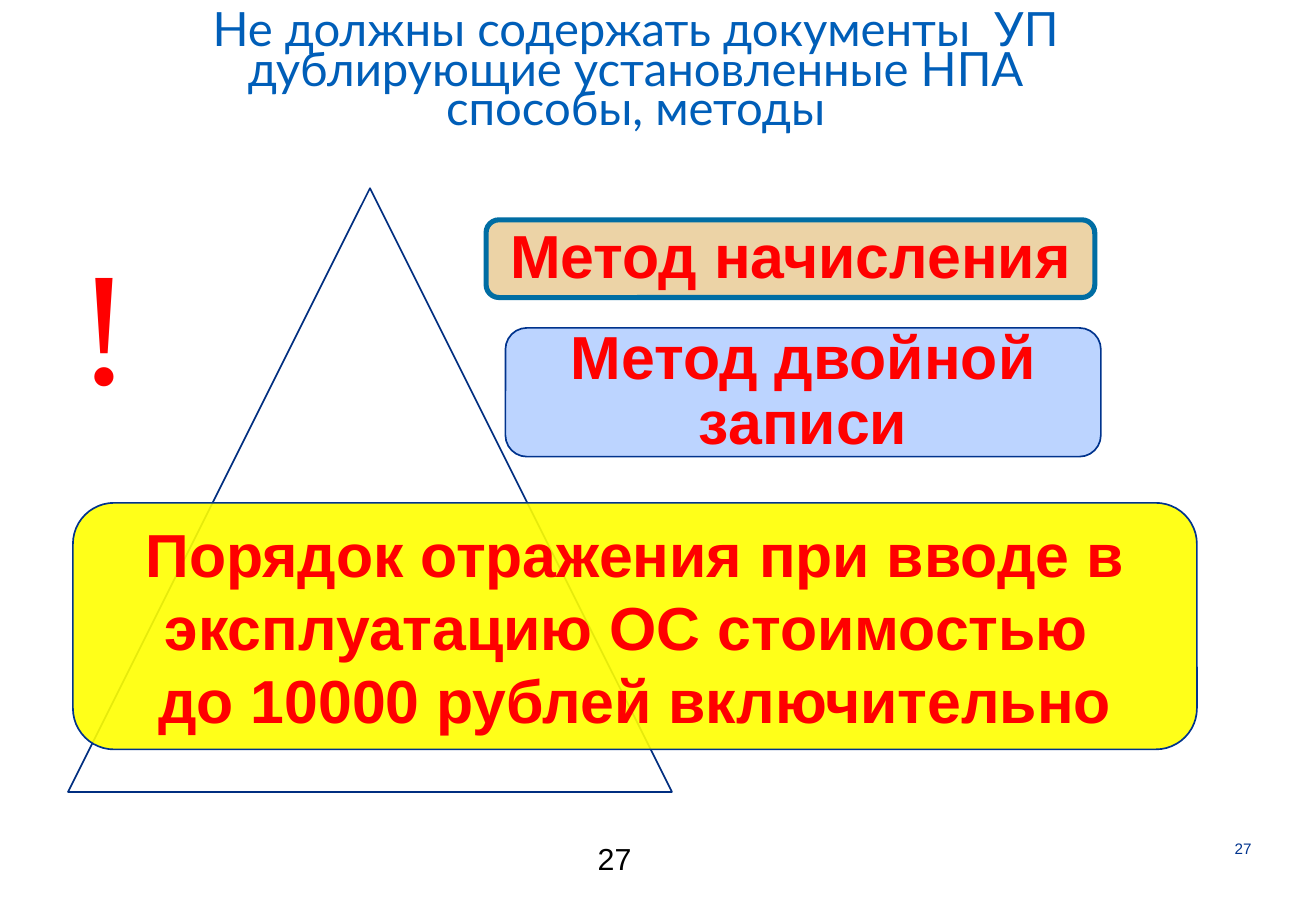
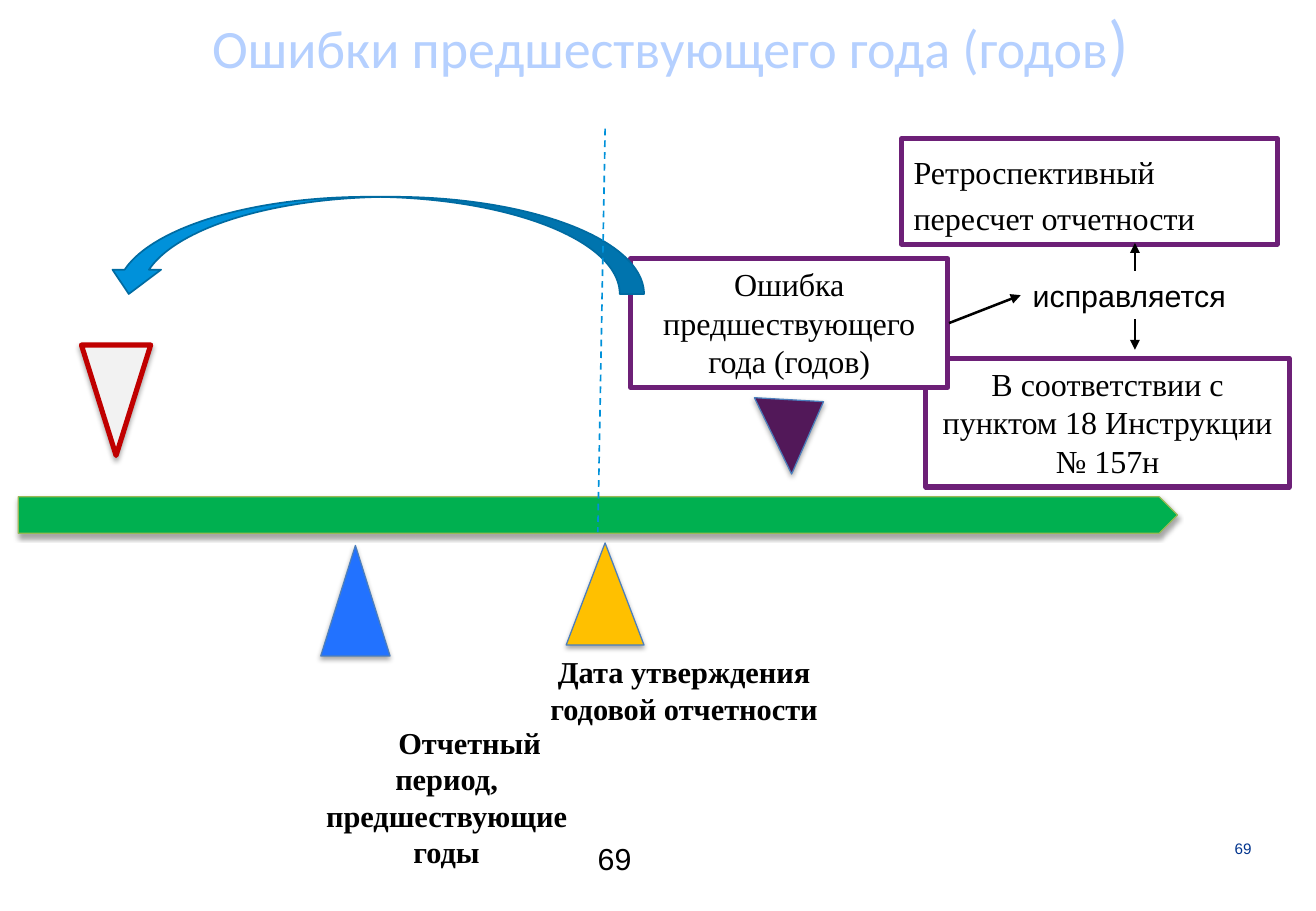
"""Build two slides on accounting policy and prior-year errors."""
from dataclasses import dataclass
from typing import Optional

from lxml.etree import SubElement
from pptx import Presentation
from pptx.dml.color import RGBColor as Rgb
from pptx.enum.dml import MSO_LINE_DASH_STYLE as Dash
from pptx.enum.shapes import MSO_CONNECTOR as Link
from pptx.enum.shapes import MSO_SHAPE as Form
from pptx.enum.text import MSO_ANCHOR as Anchor
from pptx.enum.text import PP_ALIGN as Align
from pptx.oxml.ns import qn
from pptx.util import Inches, Length, Pt

HUES = {
    "white": "FFFFFF", "black": "000000", "red": "FF0000", "crimson": "C00000",
    "navy": "00338D", "deep": "002E80", "title": "005EB8", "pale": "B5D0FF",
    "sand": "EBCF9D", "teal": "006DA3", "yellow": "FFFF00", "green": "00B050",
    "olive": "98B955", "gold": "FFC000", "blue": "2272FF", "steel": "4B7EBC",
    "plum": "521859", "purple": "6D2077", "grey": "F2F2F2", "sky": "0091DA",
    "ocean": "006BA1",
}
SERIF = "Times New Roman"
Box = tuple[float, float, float, float]


@dataclass(frozen=True)
class Text:
    """Words and their look."""
    words: str
    size: float
    hue: str = "black"
    font: str = SERIF
    bold: bool = False
    align: Align = Align.CENTER
    space: Optional[float | Length] = None
    before: float = 0
    indent: float = 0
    inset: tuple[float, float] = (0.1, 0.05)
    anchor: Anchor = Anchor.TOP


@dataclass(frozen=True)
class Block:
    """A filled preset shape with optional text."""
    form: Form
    box: Box
    fill: str
    edge: str
    width: float
    text: Optional[Text] = None
    turn: float = 0
    alpha: int = 100
    shade: bool = False
    adjust: Optional[float] = None


@dataclass(frozen=True)
class Stroke:
    """A straight line, with an arrowhead unless dashed."""
    start: tuple[float, float]
    end: tuple[float, float]
    hue: str = "black"
    width: float = 1.5
    dashed: bool = False


def color(name: str) -> Rgb:
    """Look up a colour."""
    return Rgb.from_string(HUES[name])


def write(shape, text: Text) -> None:
    """Fill a shape with formatted text."""
    frame = shape.text_frame
    frame.text = text.words
    frame.word_wrap = True
    frame.vertical_anchor = text.anchor
    frame.margin_left = frame.margin_right = Inches(text.inset[0])
    frame.margin_top = frame.margin_bottom = Inches(text.inset[1])
    for para in frame.paragraphs:
        para.alignment = text.align
        para.line_spacing = text.space
        para.space_before = Pt(text.before)
        if text.indent:
            para._p.get_or_add_pPr().set("indent", str(Inches(text.indent)))
        for run in para.runs:
            font = run.font
            font.name, font.size, font.bold = text.font, Pt(text.size), text.bold
            font.color.rgb = color(text.hue)


def label(slide, box: Box, text: Text):
    """Add a text box."""
    shape = slide.shapes.add_textbox(*map(Inches, box))
    write(shape, text)
    return shape


def draw(slide, block: Block) -> None:
    """Add a preset shape."""
    shape = slide.shapes.add_shape(block.form, *map(Inches, block.box))
    shape.rotation = block.turn
    if block.adjust is not None:
        shape.adjustments[0] = block.adjust
    shape.fill.solid()
    shape.fill.fore_color.rgb = color(block.fill)
    shape.line.color.rgb = color(block.edge)
    shape.line.width = Pt(block.width)
    shape.shadow.inherit = False
    props = shape.element.spPr
    if block.alpha < 100:
        tint = props.find(qn("a:solidFill")).find(qn("a:srgbClr"))
        SubElement(tint, qn("a:alpha"), val=str(block.alpha * 1000))
    if block.shade:
        cast = SubElement(props.find(qn("a:effectLst")), qn("a:outerShdw"),
                          blurRad=str(Pt(3.1)), dist=str(Pt(1.8)),
                          dir="5400000", rotWithShape="0")
        tint = SubElement(cast, qn("a:srgbClr"), val=HUES["black"])
        SubElement(tint, qn("a:alpha"), val="35000")
    if block.text:
        write(shape, block.text)


def join(slide, stroke: Stroke) -> None:
    """Add a connector."""
    ends = map(Inches, stroke.start + stroke.end)
    wire = slide.shapes.add_connector(Link.STRAIGHT, *ends)
    wire.line.color.rgb = color(stroke.hue)
    wire.line.width = Pt(stroke.width)
    props = wire.element.spPr
    if stroke.dashed:
        wire.line.dash_style = Dash.DASH
    else:
        SubElement(props.find(qn("a:ln")), qn("a:tailEnd"), type="triangle")
    SubElement(props, qn("a:effectLst"))


def start(deck, number: str, box: Box, title: Text):
    """Add a slide with its title and page numbers; return it and the title."""
    slide = deck.slides.add_slide(deck.slide_layouts[6])
    label(slide, (9.87, 6.91, 0.43, 0.16),
          Text(number, 9, "navy", "Arial", align=Align.RIGHT, inset=(0, 0)))
    label(slide, (4.82, 7.01, 0.85, 0.17),
          Text(number, 18, font="Arial", align=Align.LEFT, space=Pt(11.6)))
    return slide, label(slide, box, title)


def method(words: str, space: Optional[float] = 0.9) -> Text:
    """Style a bold red method name."""
    return Text(words, 36, "red", "Arial", True, space=space, anchor=Anchor.MIDDLE)


def rules(deck) -> None:
    """Build the slide on methods not to repeat."""
    slide, _ = start(deck, "27", (0.54, 0.12, 9.38, 1.41), Text(
        "Не должны содержать документы  УП дублирующие установленные НПА\v"
        "способы, методы", 28, "title", "Lato", space=0.7, inset=(0, 0)))
    order = ("Порядок отражения при вводе в эксплуатацию ОС стоимостью \n"
             "до 10000 рублей включительно")
    for block in (
        Block(Form.ISOSCELES_TRIANGLE, (0.56, 1.55, 4.97, 4.97), "white", "deep", 1),
        Block(Form.ROUNDED_RECTANGLE, (4, 1.81, 5.01, 0.64), "sand", "teal", 3,
              method("Метод начисления"), alpha=90),
        Block(Form.ROUNDED_RECTANGLE, (4.16, 2.7, 4.9, 1.06), "pale", "navy", 1,
              method("Метод двойной записи"), alpha=90),
        Block(Form.ROUNDED_RECTANGLE, (0.6, 4.14, 9.25, 2.03), "yellow", "navy", 1,
              method(order, None), alpha=90),
    ):
        draw(slide, block)
    label(slide, (0.54, 1.78, 1.09, 1.72), Text("!", 96, "red", align=Align.LEFT))


def errors(deck) -> None:
    """Build the timeline of prior-year errors."""
    slide, title = start(deck, "69", (0.81, 0.19, 9.42, 0.47), Text(
        "Ошибки предшествующего года (годов", 32, "pale", "Calibri",
        space=0.7, inset=(0, 0)))
    close = title.text_frame.paragraphs[0].add_run()
    close.text = ")"
    close.font.name, close.font.size = "Calibri", Pt(40)
    close.font.color.rgb = color("pale")

    peak = Form.ISOSCELES_TRIANGLE
    for block in (
        Block(Form.PENTAGON, (0.15, 4.09, 9.54, 0.3), "green", "olive", 0.75, shade=True),
        Block(peak, (4.66, 4.47, 0.64, 0.84), "gold", "steel", 0.75, shade=True),
        Block(peak, (2.64, 4.49, 0.57, 0.91), "blue", "steel", 0.75, shade=True),
        Block(Form.RECTANGLE, (7.62, 2.95, 2.99, 1.06), "white", "purple", 3,
              Text("В соответствии с пунктом 18 Инструкции № 157н", 19)),
        Block(Form.RECTANGLE, (5.19, 2.13, 2.61, 1.06), "white", "purple", 3,
              Text("Ошибка предшествующего года (годов)", 19)),
        Block(peak, (0.67, 2.84, 0.57, 0.91), "grey", "crimson", 3, turn=180, shade=True),
        Block(Form.RECTANGLE, (7.42, 1.14, 3.09, 0.87), "white", "purple", 3,
              Text("Ретроспективный пересчет отчетности", 19,
                   align=Align.JUSTIFY, space=1.2, before=3.8)),
        Block(peak, (6.19, 3.29, 0.57, 0.61), "plum", "steel", 0.75,
              turn=183.3, shade=True, adjust=0.4),
        Block(Form.CURVED_UP_ARROW, (0.86, 1.62, 4.44, 0.8), "sky", "ocean", 1, turn=180),
    ):
        draw(slide, block)
    for box, text in (
        ((2.48, 5.91, 2.39, 1.31),
         Text("Отчетный период, предшествующие годы", 18, bold=True, indent=0.38)),
        ((4.22, 5.33, 2.82, 0.71),
         Text("Дата утверждения годовой отчетности", 18, bold=True)),
        ((8.4, 2.23, 1.88, 0.4),
         Text("исправляется", 18, font="Arial", align=Align.LEFT)),
    ):
        label(slide, box, text)
    for stroke in (
        Stroke((4.98, 1.06), (4.92, 4.38), "sky", 1, True),
        Stroke((7.81, 2.66), (8.4, 2.43)),
        Stroke((9.34, 2.23), (9.34, 2)),
        Stroke((9.34, 2.63), (9.34, 2.88)),
    ):
        join(slide, stroke)


def main() -> None:
    """Build and save the deck."""
    deck = Presentation()
    deck.slide_width, deck.slide_height = Inches(10.83), Inches(7.5)
    rules(deck)
    errors(deck)
    deck.save("out.pptx")


if __name__ == "__main__":
    main()
